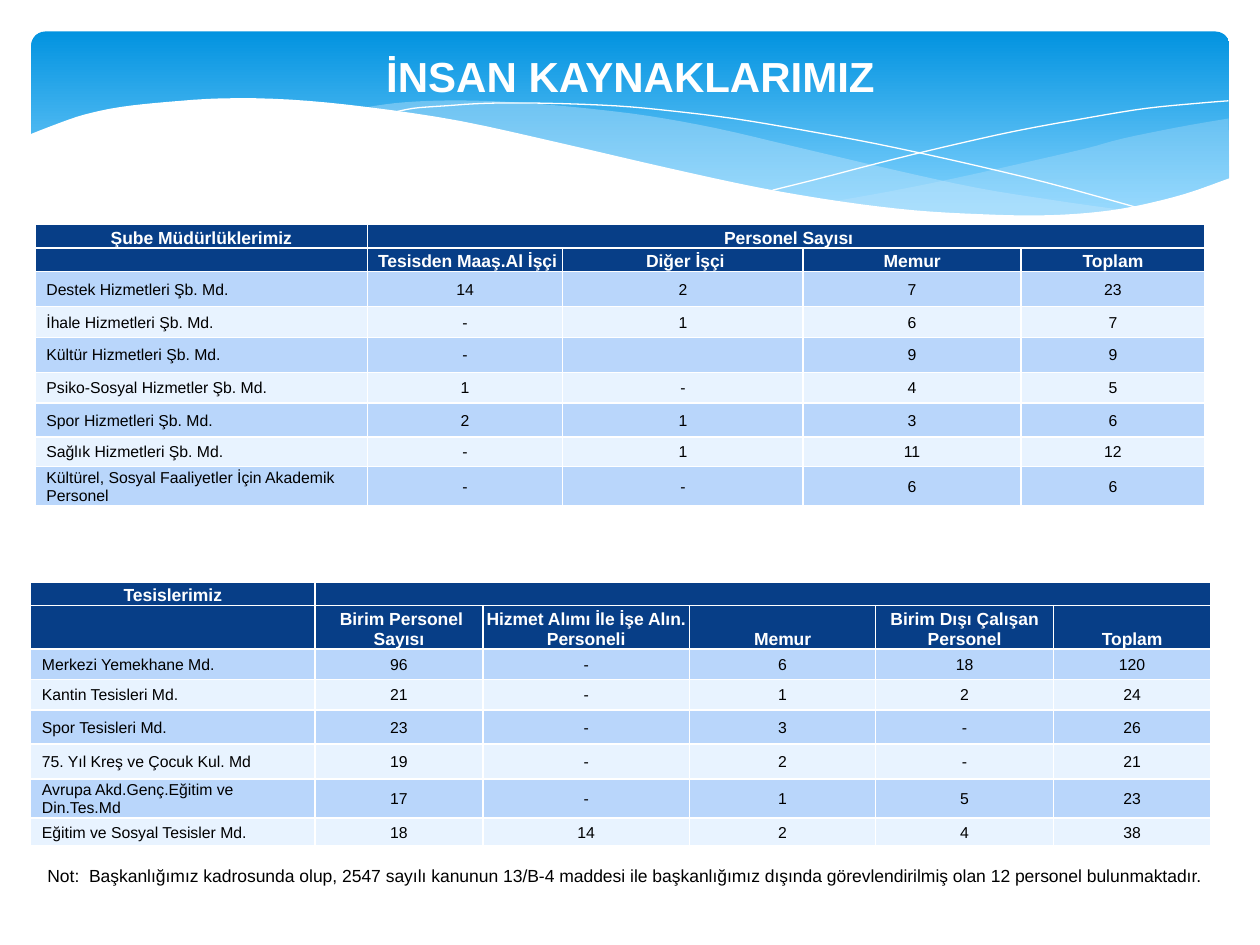
from dataclasses import dataclass
from lxml.etree import SubElement as Sub
from pptx import Presentation
from pptx.dml.color import RGBColor as Rgb
from pptx.enum.shapes import MSO_SHAPE as Form
from pptx.enum.text import MSO_ANCHOR as Anchor, PP_ALIGN as Align
from pptx.oxml.ns import qn
from pptx.util import Pt


# Theme: colours, font and type sizes
@dataclass(frozen=True)
class Theme:
    font: str = "Arial"
    white: str = "FFFFFF"
    black: str = "000000"
    navy: str = "073E87"
    bands: tuple = ("B9D6FB", "E8F3FF")
    sky: tuple = ("0293E0", "83D3FE")
    mist: str = "C6E7FC"
    title: float = 24
    head: float = 10
    body: float = 9
    note: float = 10


@dataclass(frozen=True)
class Wave:
    runs: tuple           # smooth runs of knots, joined by straight lines
    fill: str = ""        # no fill means an open white hairline
    alpha: int = 100


@dataclass(frozen=True)
class Grid:
    left: float
    top: float
    cols: tuple
    rows: tuple
    head: tuple           # two header rows
    data: tuple


T = Theme()

# Banner curves, knots in points
WAVES = (
    Wave((((702, 67.7), (673.2, 72.7), (641.5, 79.2), (619.9, 85), (579.6, 94.3),
           (542.2, 102.6), (508.3, 109.4), (475.9, 115.2)),
          ((475.9, 115.2), (507.6, 118.8), (536.4, 121.7), (562.3, 123.6), (586.1, 124),
           (607.7, 123.1), (627.8, 121.5), (645.8, 118.8), (663.1, 115.2),
           (683.3, 109.4), (702.7, 101.5))), T.mist, 29),
    Wave((((643, 120.2), (602.6, 114.5), (558, 107.3), (508.3, 96.5), (452.9, 83.5),
           (409.7, 73.4), (370.1, 66.2), (334.8, 61.9), (302.4, 59), (273.6, 57.6),
           (247.7, 57.6), (225.4, 59), (205.9, 61.9)),
          ((205.9, 61.9), (232.6, 64.8), (260.6, 69.8), (290.9, 76.3), (323.3, 83.5),
           (381.6, 97.2), (432.7, 108), (468, 113.8), (500.4, 118.8), (529.9, 121.7),
           (556.6, 123.8), (581, 124.6), (603.4, 123.8), (624.2, 122.4),
           (643, 120.2))), T.mist, 40),
    Wave((((222.5, 64.8), (236.2, 61.9), (254.2, 60.5), (278.6, 59), (311.8, 59),
           (352.1, 60.5), (383.8, 63.4), (419, 67.7), (457.9, 74.2), (500.4, 82.1),
           (547.2, 92.2), (598.3, 104.4), (653, 119.5)),)),
    Wave((((441.4, 108.7), (470.2, 101.5), (500.4, 93.6), (538.6, 84.2), (580.3, 74.9),
           (623.5, 67), (655.2, 61.9), (684.7, 59), (702, 57.6)),)),
    Wave((((703.4, 101.5), (676.8, 110.9), (647.3, 118.1), (621.4, 121.7),
           (592.6, 123.1), (560.2, 122.4), (522.7, 120.2), (481, 115.2), (434.2, 107.3),
           (380.9, 95.8), (321.8, 82.1), (262.8, 69.1), (210.2, 61.2), (165.6, 56.9),
           (127.4, 56.2), (95, 58.3), (68.4, 61.2), (48.2, 65.5), (33.1, 70.6),
           (16.6, 77)), ((16.6, 161.3), (703.4, 161.3))), T.white),
)

# Staff tables
GRIDS = (
    Grid(20, 128.3, (190, 111.5, 137.5, 124.5, 105),
         (13.5, 13.5, 20, 17.5, 20, 17.5, 19.5, 17, 17.5),
         (("Şube Müdürlüklerimiz", " Personel Sayısı"),
          ("", " Tesisden Maaş.Al İşçi", " Diğer İşçi", "Memur", "Toplam")),
         (("Destek Hizmetleri Şb. Md.", "14", "2", "7", "23"),
          ("İhale Hizmetleri Şb. Md.", "-", "1", "6", "7"),
          ("Kültür Hizmetleri Şb. Md.", "-", "", "9", "9"),
          ("Psiko-Sosyal Hizmetler Şb. Md.", "1", "-", "4", "5"),
          ("Spor Hizmetleri Şb. Md.", "2", "1", "3", "6"),
          ("Sağlık Hizmetleri Şb. Md.", "-", "1", "11", "12"),
          ("Kültürel, Sosyal Faaliyetler İçin Akademik Personel",
           "-", "-", "6", "6"))),
    Grid(17.5, 332.5, (162.5, 96, 118, 106.5, 101.5, 90),
         (13.5, 23, 17.5, 17.5, 19.5, 20, 19.5, 16),
         (("Tesislerimiz", ""),
          ("", " Birim Personel\nSayısı", "Hizmet Alımı İle İşe Alın. Personeli",
           "Memur", "Birim Dışı Çalışan Personel", "Toplam")),
         (("Merkezi Yemekhane Md.", "96", "-", "6", "18", "120"),
          ("Kantin Tesisleri Md.", "21", "-", "1", "2", "24"),
          ("Spor Tesisleri Md.", "23", "-", "3", "-", "26"),
          ("75. Yıl Kreş ve Çocuk Kul. Md", "19", "-", "2", "-", "21"),
          ("Avrupa Akd.Genç.Eğitim ve Din.Tes.Md", "17", "-", "1", "5", "23"),
          ("Eğitim ve Sosyal Tesisler Md.", "18", "14", "2", "4", "38"))),
)


def style(frame, text: str, size: float, color: str, bold: bool, align) -> None:
    frame.text = text
    for para in frame.paragraphs:
        para.alignment = align
        for run in para.runs:
            run.font.name, run.font.size, run.font.bold = T.font, Pt(size), bold
            run.font.color.rgb = Rgb.from_string(color)
        if not para.runs:  # keeps empty cells from stretching their row
            Sub(para._p, qn("a:endParaRPr"), sz=str(int(size * 100)))


def label(slide, box: tuple, text: str, size: float, color: str,
          bold: bool, align, anchor) -> None:
    frame = slide.shapes.add_textbox(*map(Pt, box)).text_frame
    frame.word_wrap, frame.vertical_anchor = True, anchor
    style(frame, text, size, color, bold, align)


def smooth(knots: tuple, steps: int = 4) -> list:
    """Points of a Catmull-Rom curve through the knots."""
    ends = (knots[0], *knots, knots[-1])
    out = [knots[0]]
    for a, b, c, d in zip(ends, ends[1:], ends[2:], ends[3:]):
        for t in (i / steps for i in range(1, steps + 1)):
            out.append(tuple(
                (2 * q + (r - p) * t + (2 * p - 5 * q + 4 * r - s) * t ** 2
                 + (3 * q - p - 3 * r + s) * t ** 3) / 2
                for p, q, r, s in zip(a, b, c, d)))
    return out


def banner(slide) -> None:
    box = slide.shapes.add_shape(Form.ROUNDED_RECTANGLE, *map(Pt, (18, 18, 684.5, 112.5)))
    box.adjustments[0] = 0.07
    box.shadow.inherit = False
    box.line.fill.background()
    box.fill.gradient()
    box.fill.gradient_angle = 270
    for stop, color, pos in zip(box.fill.gradient_stops, T.sky, (0, 0.9)):
        stop.color.rgb, stop.position = Rgb.from_string(color), pos


def draw(slide, wave: Wave) -> None:
    pts = [(Pt(x), Pt(y)) for run in wave.runs for x, y in smooth(run)]
    pen = slide.shapes.build_freeform(*pts[0], scale=1.0)
    pen.add_line_segments(pts[1:], close=bool(wave.fill))
    shape = pen.convert_to_shape()
    shape.shadow.inherit = False
    if not wave.fill:
        shape.fill.background()
        shape.line.color.rgb, shape.line.width = Rgb.from_string(T.white), Pt(0)
        return
    shape.line.fill.background()
    shape.fill.solid()
    shape.fill.fore_color.rgb = Rgb.from_string(wave.fill)
    if wave.alpha < 100:
        tint = shape._element.spPr.find(".//" + qn("a:srgbClr"))
        Sub(tint, qn("a:alpha"), val=str(wave.alpha * 1000))


def border(cell) -> None:
    for side in "LRTB":
        line = Sub(cell._tc.get_or_add_tcPr(), qn(f"a:ln{side}"), w=str(Pt(1)))
        Sub(Sub(line, qn("a:solidFill")), qn("a:srgbClr"), val=T.white)


def table(slide, grid: Grid) -> None:
    size = (sum(grid.cols), sum(grid.rows))
    tab = slide.shapes.add_table(len(grid.rows), len(grid.cols),
                                 *map(Pt, (grid.left, grid.top, *size))).table
    tab.first_row = tab.horz_banding = False
    for col, width in zip(tab.columns, grid.cols):
        col.width = Pt(width)
    for row, high in zip(tab.rows, grid.rows):
        row.height = Pt(high)
    tab.cell(0, 1).merge(tab.cell(0, len(grid.cols) - 1))
    for r, row in enumerate(grid.head + grid.data):
        top = r < len(grid.head)
        for c in range(len(grid.cols)):
            cell = tab.cell(r, c)
            name = c == 0 and not top
            cell.margin_left = Pt(6.5 if name else 0.7)
            cell.margin_right = cell.margin_top = Pt(0.7)
            cell.margin_bottom = Pt(0)
            cell.vertical_anchor = Anchor.BOTTOM if top else Anchor.MIDDLE
            border(cell)
            cell.fill.solid()
            cell.fill.fore_color.rgb = Rgb.from_string(T.navy if top else T.bands[r % 2])
            style(cell.text_frame, row[c] if c < len(row) else "",
                  T.head if top else T.body, T.white if top else T.black,
                  top, Align.LEFT if name else Align.CENTER)


def main() -> None:
    deck = Presentation()
    deck.slide_width, deck.slide_height = Pt(720), Pt(540)
    slide = deck.slides.add_slide(deck.slide_layouts[6])
    # Banner and title
    banner(slide)
    for wave in WAVES:
        draw(slide, wave)
    label(slide, (20, 15, 680.5, 57), "İNSAN KAYNAKLARIMIZ", T.title, T.white,
          True, Align.CENTER, Anchor.MIDDLE)
    # Tables and footnote
    for grid in GRIDS:
        table(slide, grid)
    label(slide, (20, 491, 675, 19.5),
          "Not:  Başkanlığımız kadrosunda olup, 2547 sayılı kanunun 13/B-4 maddesi ile "
          "başkanlığımız dışında görevlendirilmiş olan 12 personel bulunmaktadır.",
          T.note, T.black, False, Align.LEFT, Anchor.TOP)
    deck.save("out.pptx")


if __name__ == "__main__":
    main()
